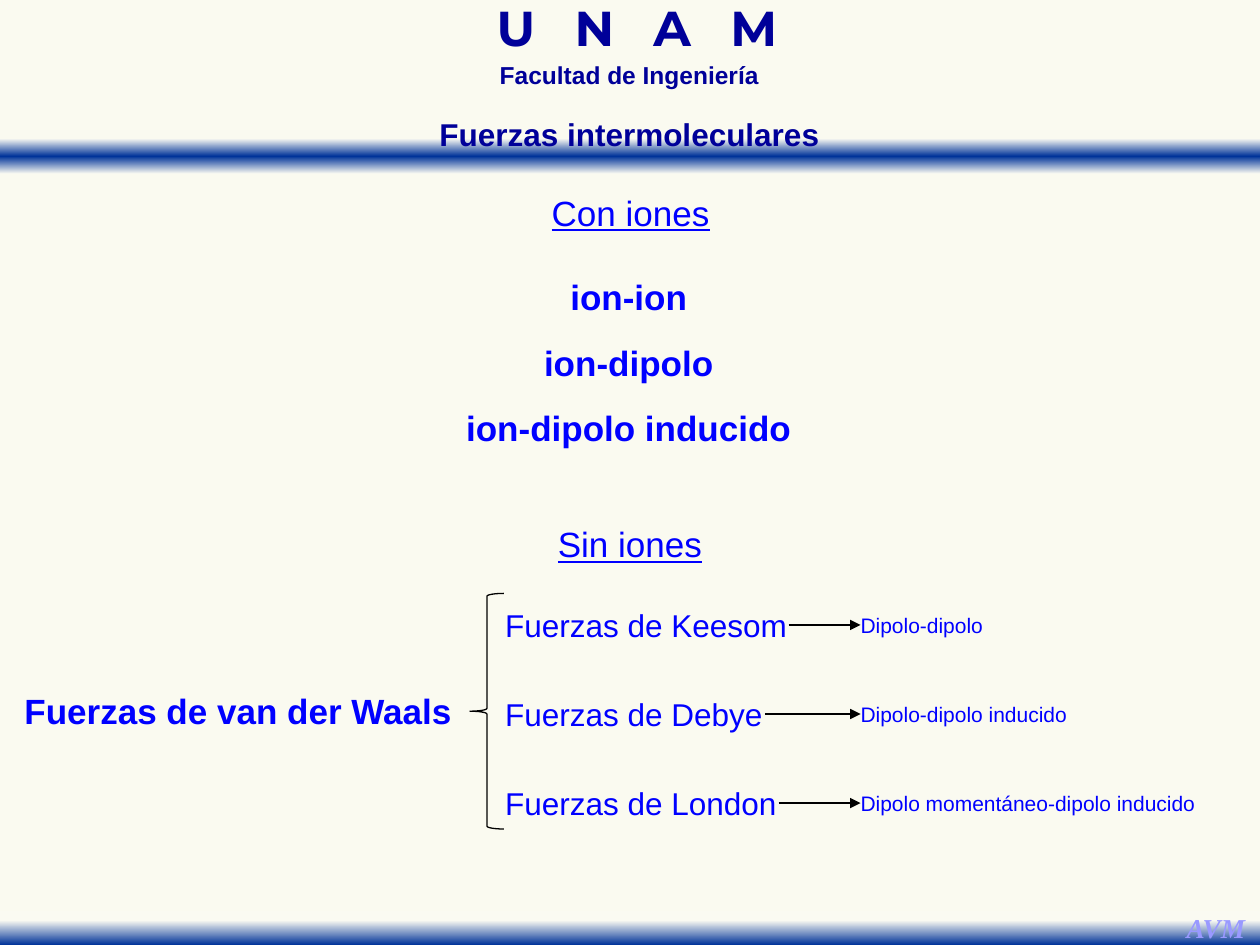
from dataclasses import dataclass

from lxml.etree import SubElement
from pptx import Presentation
from pptx.dml.color import RGBColor
from pptx.enum.shapes import MSO_CONNECTOR, MSO_SHAPE
from pptx.enum.text import MSO_ANCHOR, MSO_AUTO_SIZE, PP_ALIGN
from pptx.oxml.ns import qn
from pptx.util import Inches, Pt

COLORS = {
    "paper": "FAFAF0",
    "fade": "FAFAF2",
    "band": "003399",
    "heading": "000099",
    "content": "0000FF",
    "signature": "9999FF",
    "ink": "000000",
}
SLIDE_W, SLIDE_H = Inches(10), Inches(7.5)
COLS, ROWS = 100, 75
COL, ROW = SLIDE_W / COLS, SLIDE_H / ROWS
FORCE_COL, KIND_COL = 40.1, 68.3
FIRST_FORCE_ROW, FORCE_PITCH = 49.6, 7.07


@dataclass(frozen=True)
class Area:
    col: float
    row: float
    cols: float
    rows: float

    def emu(self) -> tuple:
        return (round(self.col * COL), round(self.row * ROW),
                round(self.cols * COL), round(self.rows * ROW))


@dataclass(frozen=True)
class Force:
    name: str
    name_cols: float
    kind: str
    kind_cols: float


FORCES = [
    Force("Fuerzas de Keesom", 22.5, "Dipolo-dipolo", 9.7),
    Force("Fuerzas de Debye", 20.6, "Dipolo-dipolo inducido", 16.4),
    Force("Fuerzas de London", 21.7, "Dipolo momentáneo-dipolo inducido", 27.3),
]
ION_FORCES = ["ion-ion", "ion-dipolo", "ion-dipolo inducido"]


def color(key: str) -> RGBColor:
    return RGBColor.from_string(COLORS[key])


def write(holder, *lines: str, size: float = 20, font: str = "Arial",
          ink: str = "content", bold: bool = False, italic: bool = False,
          underline: bool = False, align=PP_ALIGN.CENTER, wrap: bool = False,
          inset: bool = True, line_spacing: float = 1.0, gap: float = 0,
          tracking: float = 0):
    frame = holder.text_frame
    frame.auto_size = MSO_AUTO_SIZE.NONE
    frame.word_wrap = wrap
    frame.vertical_anchor = MSO_ANCHOR.TOP
    if not inset:
        frame.margin_left = frame.margin_right = 0
        frame.margin_top = frame.margin_bottom = 0
    for index, line in enumerate(lines):
        paragraph = frame.add_paragraph() if index else frame.paragraphs[0]
        paragraph.alignment = align
        paragraph.line_spacing = line_spacing
        paragraph.space_before = Pt(gap if index else 0)
        run = paragraph.add_run()
        run.text = line
        run.font.size, run.font.name = Pt(size), font
        run.font.bold, run.font.italic = bold, italic
        run.font.underline = underline
        run.font.color.rgb = color(ink)
        if tracking:
            run.font._element.set("spc", str(round(tracking * 100)))
    return holder


def add_text(slide, area: Area, text: str, **style):
    return write(slide.shapes.add_textbox(*area.emu()), text, **style)


def place(placeholder, area: Area):
    (placeholder.left, placeholder.top,
     placeholder.width, placeholder.height) = area.emu()
    return placeholder


def add_band(slide, area: Area, stops: list) -> None:
    band = slide.shapes.add_shape(MSO_SHAPE.RECTANGLE, *area.emu())
    band.shadow.inherit = False
    band.line.fill.background()
    band.fill.gradient()
    band.fill.gradient_angle = 270
    stop_list = band._element.spPr.find(qn("a:gradFill")).find(qn("a:gsLst"))
    for stop in list(stop_list):
        stop_list.remove(stop)
    for percent, key in stops:
        stop = SubElement(stop_list, qn("a:gs"), pos=str(percent * 1000))
        SubElement(stop, qn("a:srgbClr"), val=COLORS[key])


def add_arrow(slide, source, target) -> None:
    arrow = slide.shapes.add_connector(MSO_CONNECTOR.STRAIGHT, 0, 0, 0, 0)
    arrow.begin_connect(source, 3)
    arrow.end_connect(target, 1)
    arrow.line.color.rgb = color("ink")
    arrow.line.width = Pt(0.75)
    SubElement(arrow.line._get_or_add_ln(), qn("a:tailEnd"), type="triangle")
    SubElement(arrow._element.spPr, qn("a:effectLst"))


def add_force(slide, force: Force, middle: float) -> None:
    style = dict(align=PP_ALIGN.LEFT, inset=False)
    name = add_text(slide, Area(FORCE_COL, middle - 1.5, force.name_cols, 3),
                    force.name, size=18, **style)
    kind = add_text(slide, Area(KIND_COL, middle - 1, force.kind_cols, 2),
                    force.kind, size=12, **style)
    add_arrow(slide, name, kind)


def add_brace(slide, area: Area) -> None:
    brace = slide.shapes.add_shape(MSO_SHAPE.LEFT_BRACE, *area.emu())
    brace.shadow.inherit = False
    brace.fill.background()
    brace.line.color.rgb = color("ink")
    brace.line.width = Pt(0.75)


def add_ion_list(placeholder) -> None:
    write(place(placeholder, Area(35.4, 21.4, 29, 14.6)), *ION_FORCES,
          bold=True, gap=13.3)
    for paragraph in placeholder.text_frame.paragraphs:
        properties = paragraph._p.get_or_add_pPr()
        properties.set("marL", "0")
        properties.set("indent", "0")
        SubElement(properties, qn("a:buNone"))


def main() -> None:
    deck = Presentation()
    deck.slide_width, deck.slide_height = SLIDE_W, SLIDE_H
    slide = deck.slides.add_slide(deck.slide_layouts[1])
    slide.background.fill.solid()
    slide.background.fill.fore_color.rgb = color("paper")
    title, ion_list = slide.placeholders

    add_band(slide, Area(0, 11, COLS, 2.8),
             [(0, "fade"), (50, "band"), (100, "fade")])
    add_band(slide, Area(0, 72.3, COLS, 2.7), [(28, "fade"), (100, "band")])
    slide.shapes._spTree.append(title._element)
    slide.shapes._spTree.append(ion_list._element)

    heading = dict(ink="heading", bold=True, wrap=True)
    add_text(slide, Area(31, 0.6, 39.1, 4.3), "U N A M", size=28,
             font="Montserrat", line_spacing=0.7, tracking=7.3, **heading)
    add_text(slide, Area(32.1, 4.9, 35.7, 2.7), "Facultad de Ingeniería",
             size=14, line_spacing=0.7, **heading)
    write(place(title, Area(28.3, 8.6, 43.3, 4)), "Fuerzas intermoleculares",
          size=18, **heading)
    add_text(slide, Area(93.1, 71.8, 6.8, 3.2), "AVM", size=15.6,
             font="Times New Roman", ink="signature", bold=True, italic=True)

    add_text(slide, Area(42.7, 14.7, 14.7, 4.4), "Con iones", underline=True)
    add_ion_list(ion_list)
    add_text(slide, Area(43.2, 41, 13.6, 4.4), "Sin iones", underline=True)

    add_text(slide, Area(0.8, 54.2, 36.2, 4.4), "Fuerzas de van der Waals",
             bold=True)
    add_brace(slide, Area(37.3, 47.1, 2.7, 18.7))
    for index, force in enumerate(FORCES):
        add_force(slide, force, FIRST_FORCE_ROW + index * FORCE_PITCH)

    deck.save("out.pptx")


if __name__ == "__main__":
    main()
